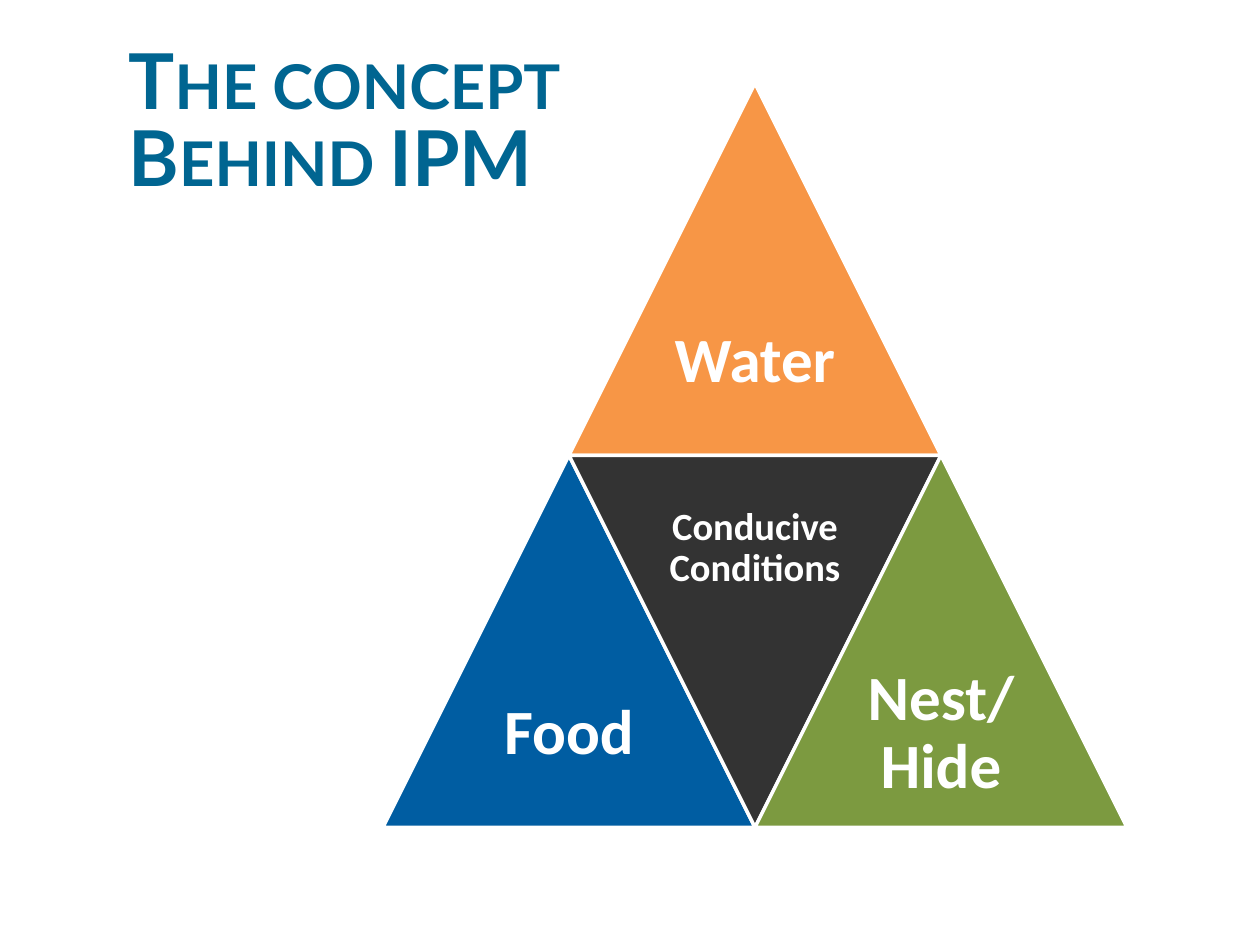
from pptx import Presentation
from pptx.dml.color import RGBColor
from pptx.enum import shapes, text
from pptx.util import Cm, Pt

COLORS = {
    "title": "006591",
    "water": "F79646",
    "food": "005DA2",
    "conditions": "333333",
    "nest": "7C9A40",
    "white": "FFFFFF",
}
SIDE = 7.5
PYRAMID_LEFT, PYRAMID_TOP = 7.72, 1.68


def color(name):
    return RGBColor.from_string(COLORS[name])


def add_run(paragraph, wording, font_name, size, color_name):
    run = paragraph.add_run()
    run.text = wording
    run.font.name = font_name
    run.font.size = Pt(size)
    run.font.bold = True
    run.font.color.rgb = color(color_name)
    return run


def add_title(slide, wording):
    title = slide.shapes.add_textbox(Cm(2.34), Cm(0.84), Cm(9.78), Cm(6.58))
    title.text_frame.word_wrap = True
    paragraph = title.text_frame.paragraphs[0]
    paragraph.line_spacing = Pt(44)
    run = add_run(paragraph, wording, "Lato", 44, "title")
    run._r.get_or_add_rPr().set("cap", "small")


def add_triangle(slide, left, top, fill, inverted):
    triangle = slide.shapes.add_shape(
        shapes.MSO_SHAPE.ISOSCELES_TRIANGLE, Cm(left), Cm(top), Cm(SIDE), Cm(SIDE))
    triangle.rotation = 180 if inverted else 0
    triangle.shadow.inherit = False
    triangle.fill.solid()
    triangle.fill.fore_color.rgb = color(fill)
    triangle.line.color.rgb = color("white")
    triangle.line.width = Pt(2)


def add_label(slide, left, top, lines, size, margin_x, margin_y):
    label = slide.shapes.add_textbox(Cm(left), Cm(top), Cm(SIDE / 2), Cm(SIDE / 2))
    frame = label.text_frame
    frame.word_wrap = True
    frame.vertical_anchor = text.MSO_ANCHOR.MIDDLE
    frame.margin_left = frame.margin_right = Cm(margin_x)
    frame.margin_top = frame.margin_bottom = Cm(margin_y)
    for index, line in enumerate(lines):
        paragraph = frame.add_paragraph() if index else frame.paragraphs[0]
        paragraph.alignment = text.PP_ALIGN.CENTER
        paragraph.line_spacing = 0.9
        add_run(paragraph, line, "Calibri", size, "white")


def add_section(slide, column, row, fill, lines, size=36,
                margin_x=0.1, margin_y=0.38, inverted=False):
    """Add a labelled triangle; columns step by half a side, rows by a full one."""
    left = PYRAMID_LEFT + column * SIDE / 2
    top = PYRAMID_TOP + row * SIDE
    add_triangle(slide, left, top, fill, inverted)
    label_top = top if inverted else top + SIDE / 2
    add_label(slide, left + SIDE / 4, label_top, lines, size, margin_x, margin_y)


def main():
    deck = Presentation()
    deck.slide_width, deck.slide_height = Cm(25.4), Cm(19.05)
    slide = deck.slides.add_slide(deck.slide_layouts[6])

    add_title(slide, "The concept Behind IPM")
    add_section(slide, 1, 0, "water", ["Water"])
    add_section(slide, 0, 1, "food", ["Food"], margin_x=0.38)
    add_section(slide, 1, 1, "conditions", ["Conducive Conditions"],
                size=22, margin_y=0.23, inverted=True)
    add_section(slide, 2, 1, "nest", ["Nest/", "Hide"])

    deck.save("out.pptx")


if __name__ == "__main__":
    main()
